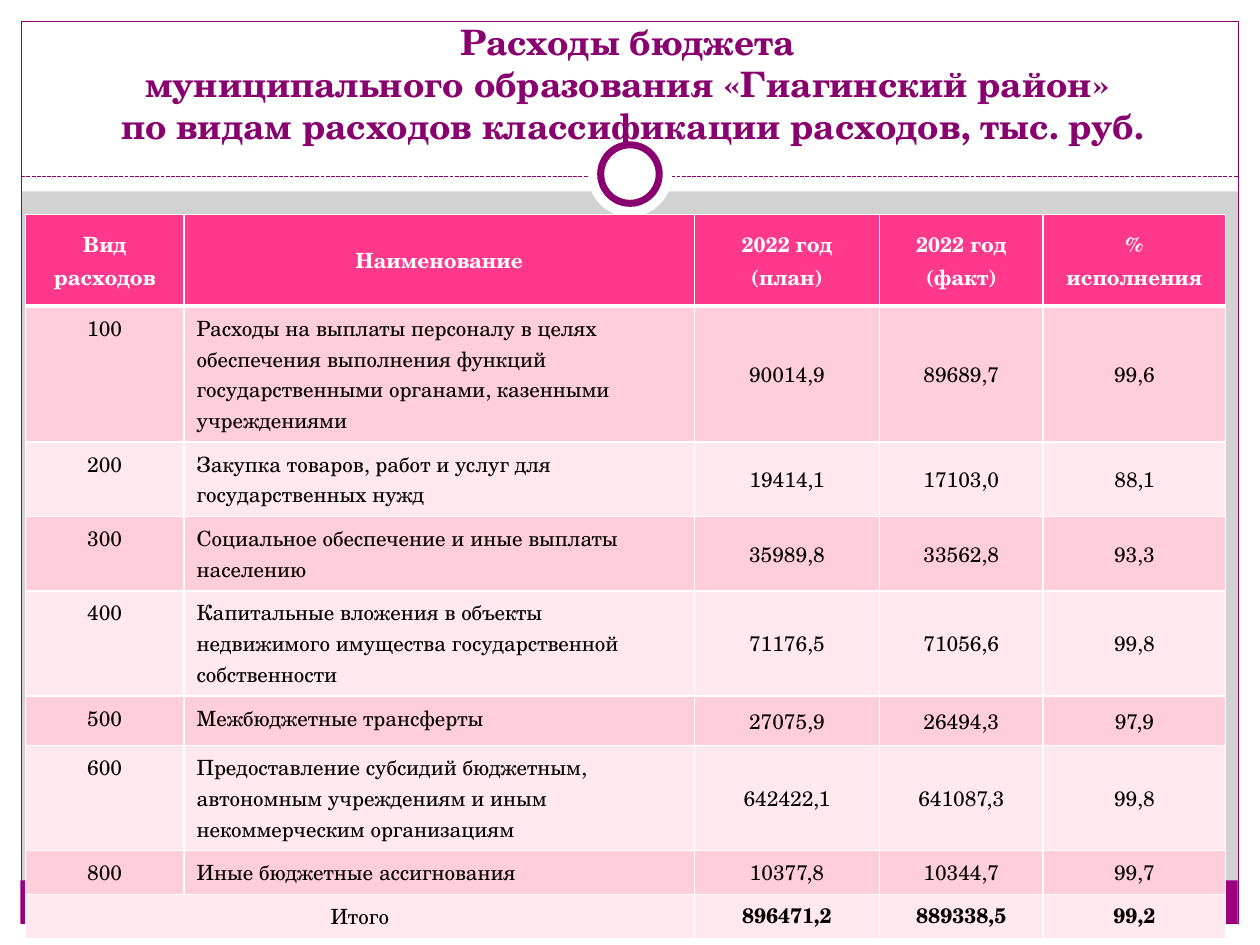
import dataclasses
import typing

import pptx
import pptx.dml.color
import pptx.enum.dml
import pptx.enum.shapes
import pptx.enum.text
import pptx.oxml
import pptx.oxml.ns
import pptx.util

Cm = pptx.util.Cm
Pt = pptx.util.Pt
Kind = pptx.enum.shapes.MSO_SHAPE
Align = pptx.enum.text.PP_ALIGN
Anchor = pptx.enum.text.MSO_ANCHOR

FACE = "TeX Gyre Schola"
WHITE = "FFFFFF"
PLUM = "8A0070"
PINK = "FF388C"
BANDS = ("FFCEDA", "FFE8EE")
WIDTHS = (3.2, 10.29, 3.73, 3.3, 3.68)


@dataclasses.dataclass
class Part:
    left: float
    top: float
    width: float
    height: float
    fill: str = ""
    line: str = ""
    weight: float = 0.75
    kind: typing.Any = Kind.RECTANGLE


@dataclasses.dataclass
class Row:
    height: float
    texts: tuple[str, ...]


PARTS = (
    Part(0, 18.62, 25.4, 0.43, WHITE),
    Part(0, 0, 25.4, 3.86, WHITE),
    Part(0, 0, 0.43, 19.05, WHITE),
    Part(24.97, 0, 0.43, 19.05, WHITE),
    Part(0.41, 17.75, 24.54, 0.87, "9C007F"),
    Part(0.43, 0.43, 24.54, 18.19, line=PLUM),
)
RINGS = (
    Part(11.85, 2.67, 1.7, 1.7, WHITE, kind=Kind.OVAL),
    Part(12.11, 2.92, 1.18, 1.18, WHITE, PLUM, 4, Kind.OVAL),
)
ROWS = (
    Row(1.85, ("Вид расходов", "Наименование", "2022 год\n(план)",
               "2022 год (факт)", "% исполнения")),
    Row(2.74, ("100", "Расходы на выплаты персоналу в целях обеспечения выполнения "
               "функций государственными органами, казенными учреждениями",
               "90014,9", "89689,7", "99,6")),
    Row(1.5, ("200", "Закупка товаров, работ и услуг для государственных нужд",
              "19414,1", "17103,0", "88,1")),
    Row(1.5, ("300", "Социальное обеспечение и иные выплаты населению",
              "35989,8", "33562,8", "93,3")),
    Row(1.85, ("400", "Капитальные вложения в объекты недвижимого имущества "
               "государственной собственности", "71176,5", "71056,6", "99,8")),
    Row(1, ("500", "Межбюджетные трансферты", "27075,9", "26494,3", "97,9")),
    Row(2.12, ("600", "Предоставление субсидий бюджетным, автономным учреждениям "
               "и иным некоммерческим организациям", "642422,1", "641087,3", "99,8")),
    Row(0.88, ("800", "Иные бюджетные ассигнования", "10377,8", "10344,7", "99,7")),
    Row(0.9, ("Итого", "", "896471,2", "889338,5", "99,2")),
)


def tint(code: str) -> pptx.dml.color.RGBColor:
    return pptx.dml.color.RGBColor.from_string(code)


def apply(thing: typing.Any, values: dict[str, typing.Any]) -> None:
    for name, value in values.items():
        setattr(thing, name, value)


def write(frame: typing.Any, text: str, size: float, code: str, bold: bool,
          align: typing.Any, pitch: typing.Any) -> None:
    frame.text = text
    for para in frame.paragraphs:
        apply(para, {"alignment": align, "line_spacing": pitch})
        for run in para.runs:
            apply(run.font, {"name": FACE, "size": Pt(size), "bold": bold})
            run.font.color.rgb = tint(code)


def draw(slide: typing.Any, part: Part) -> None:
    shape = slide.shapes.add_shape(part.kind, Cm(part.left), Cm(part.top),
                                   Cm(part.width), Cm(part.height))
    shape.shadow.inherit = False
    if part.fill:
        shape.fill.solid()
        shape.fill.fore_color.rgb = tint(part.fill)
    else:
        shape.fill.background()
    if part.line:
        shape.line.color.rgb = tint(part.line)
        shape.line.width = Pt(part.weight)
    else:
        shape.line.fill.background()


def rule(slide: typing.Any) -> None:
    line = slide.shapes.add_connector(pptx.enum.shapes.MSO_CONNECTOR.STRAIGHT,
                                      Cm(0.43), Cm(3.56), Cm(24.97), Cm(3.56))
    line.line.color.rgb = tint(PLUM)
    apply(line.line, {"width": Pt(0.75),
                      "dash_style": pptx.enum.dml.MSO_LINE.SQUARE_DOT})
    props = line._element.spPr
    props.append(props.makeelement(pptx.oxml.ns.qn("a:effectLst"), {}))


def title(slide: typing.Any) -> None:
    box = slide.shapes.add_textbox(Cm(0.51), Cm(0.74), Cm(24.49), Cm(2.34))
    apply(box.text_frame, {"word_wrap": True, "vertical_anchor": Anchor.BOTTOM})
    write(box.text_frame,
          "Расходы бюджета \vмуниципального образования «Гиагинский район» \v"
          "по видам расходов классификации расходов, тыс. руб.",
          20, "89006F", True, Align.CENTER, 1.0)


def edge(cell: typing.Any, base: float) -> None:
    props = cell._tc.get_or_add_tcPr()
    for side, weight in {"L": 1, "R": 1, "T": 1, "B": base}.items():
        props.append(pptx.oxml.parse_xml(
            f'<a:ln{side} {pptx.oxml.ns.nsdecls("a")} w="{Pt(weight)}"><a:solidFill>'
            f'<a:srgbClr val="{WHITE}"/></a:solidFill></a:ln{side}>'))


def table(slide: typing.Any) -> None:
    grid = slide.shapes.add_table(
        len(ROWS), len(WIDTHS), Cm(0.51), Cm(4.32), Cm(sum(WIDTHS)),
        Cm(sum(row.height for row in ROWS))).table
    for col, width in zip(grid.columns, WIDTHS):
        col.width = Cm(width)
    last = len(ROWS) - 1
    grid.cell(last, 0).merge(grid.cell(last, 1))
    for r, row in enumerate(ROWS):
        grid.rows[r].height = Cm(row.height)
        head = r == 0
        for c, text in enumerate(row.texts):
            cell = grid.cell(r, c)
            edge(cell, 3 if head or (r == last and False) else 1)
            cell.fill.solid()
            cell.fill.fore_color.rgb = tint(PINK if head else BANDS[(r - 1) % 2])
            mid = head or (c > 1 and r < last)
            cell.vertical_anchor = Anchor.MIDDLE if mid else Anchor.TOP
            if cell.is_spanned:
                continue
            left = c == 1 and not head
            write(cell.text_frame, text, 12, WHITE if head else "000000",
                  head or (r == last and c > 1),
                  Align.LEFT if left else Align.CENTER, Pt(18.9 if head else 17.6))


def main() -> None:
    deck = pptx.Presentation()
    apply(deck, {"slide_width": Cm(25.4), "slide_height": Cm(19.05)})
    slide = deck.slides.add_slide(deck.slide_layouts[6])
    slide.background.fill.solid()
    slide.background.fill.fore_color.rgb = tint("D2D2D2")
    for part in PARTS:
        draw(slide, part)
    rule(slide)
    for ring in RINGS:
        draw(slide, ring)
    title(slide)
    table(slide)
    deck.save("out.pptx")


if __name__ == "__main__":
    main()
